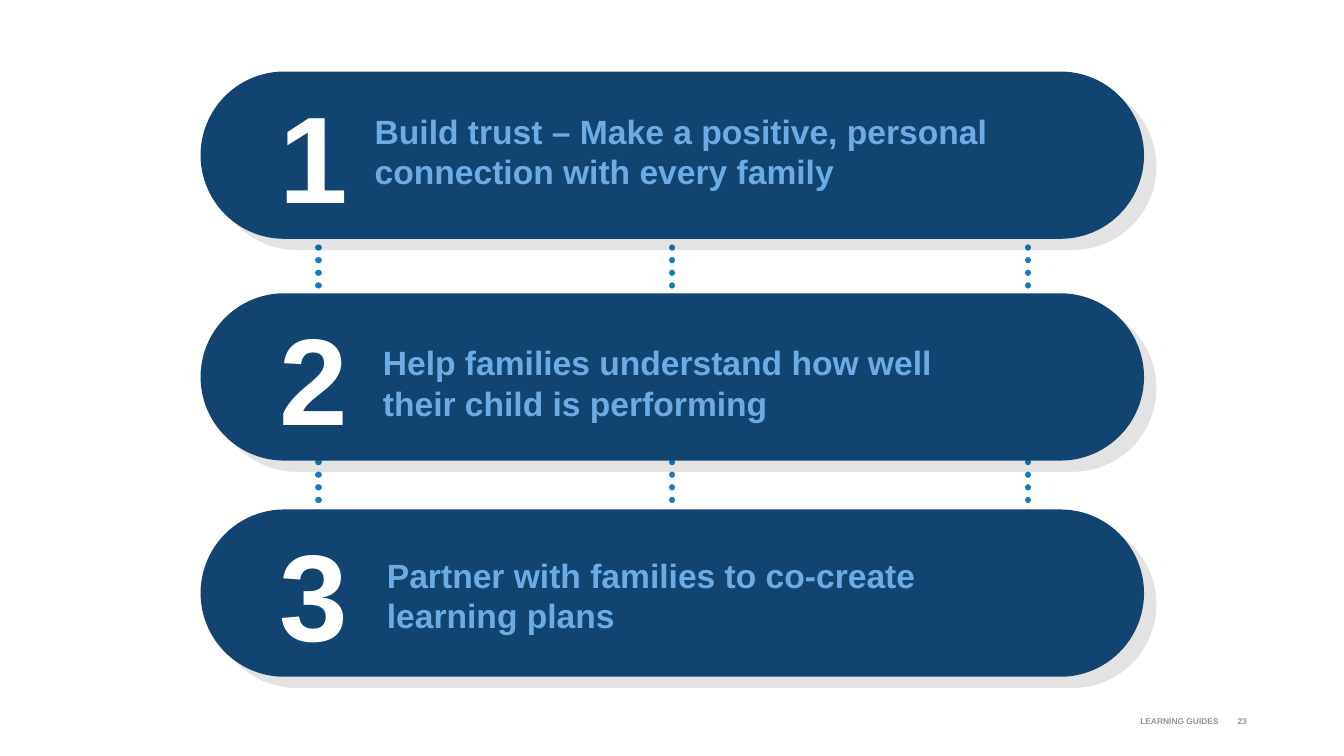
from lxml import etree
from pptx import Presentation
from pptx.dml.color import RGBColor
from pptx.enum import dml, shapes, text
from pptx.oxml import ns
from pptx.util import Pt


def tint(color, code):
    color.rgb = RGBColor.from_string(code)


def label(words, left, top, width, height, size, code, align, inset=None):
    box = slide.shapes.add_textbox(Pt(left), Pt(top), Pt(width), Pt(height))
    frame = box.text_frame
    frame.word_wrap = True
    frame.text = words
    if inset is not None:
        frame.margin_left = frame.margin_right = Pt(inset)
        frame.margin_top = frame.margin_bottom = Pt(inset)
        frame.vertical_anchor = text.MSO_ANCHOR.MIDDLE
    para = frame.paragraphs[0]
    para.alignment = align
    font = para.runs[0].font
    font.name = "Arial"
    font.size = Pt(size)
    font.bold = True
    tint(font.color, code)


deck = Presentation()
deck.slide_width = Pt(960)
deck.slide_height = Pt(540)
slide = deck.slides.add_slide(deck.slide_layouts[6])
ALIGN = text.PP_ALIGN

for words, left, width in [("LEARNING GUIDES", 557.3, 316.8), ("23", 879.1, 15.1)]:
    label(words, left, 508.3, width, 13, 6, "949494", ALIGN.RIGHT, 3.6)

for x in (227.5, 480.2, 734.4):
    dots = slide.shapes.add_connector(
        shapes.MSO_CONNECTOR.STRAIGHT, Pt(x), Pt(167.8), Pt(x), Pt(366.5))
    tint(dots.line.color, "167BBF")
    dots.line.width = Pt(4.5)
    dots.line.dash_style = dml.MSO_LINE.ROUND_DOT
    props = dots._element.spPr
    props.find(ns.qn("a:ln")).set("cap", "rnd")
    etree.SubElement(props, ns.qn("a:effectLst"))

steps = [
    ("Build trust – Make a positive, personal connection with every family",
     51.1, 260.6, 75.6, 477.4),
    ("Help families understand how well their child is performing",
     209.5, 266.4, 240.8, 442.8),
    ("Partner with families to co-create learning plans",
     363.9, 269.3, 392.8, 468.7),
]
for num, (words, top, left, head, width) in enumerate(steps, 1):
    pill = slide.shapes.add_shape(
        shapes.MSO_SHAPE.ROUNDED_RECTANGLE, Pt(143.3), Pt(top), Pt(673.9), Pt(119.5))
    pill.adjustments[0] = 0.5
    pill.fill.solid()
    tint(pill.fill.fore_color, "114470")
    pill.line.fill.background()
    pill.shadow.inherit = False
    effects = pill._element.spPr.find(ns.qn("a:effectLst"))
    shade = etree.SubElement(effects, ns.qn("a:outerShdw"), blurRad="0",
                             dist=str(Pt(12)), dir=str(42 * 60000),
                             algn="tl", rotWithShape="0")
    black = etree.SubElement(shade, ns.qn("a:srgbClr"), val="000000")
    etree.SubElement(black, ns.qn("a:alpha"), val="11000")
    label(str(num), 104.4, top + 2.6, 239.8, 113.8, 88, "FFFFFF", ALIGN.CENTER)
    label(words, left, head, width, 65.5, 24, "6CABE4", ALIGN.LEFT)

deck.save("out.pptx")
